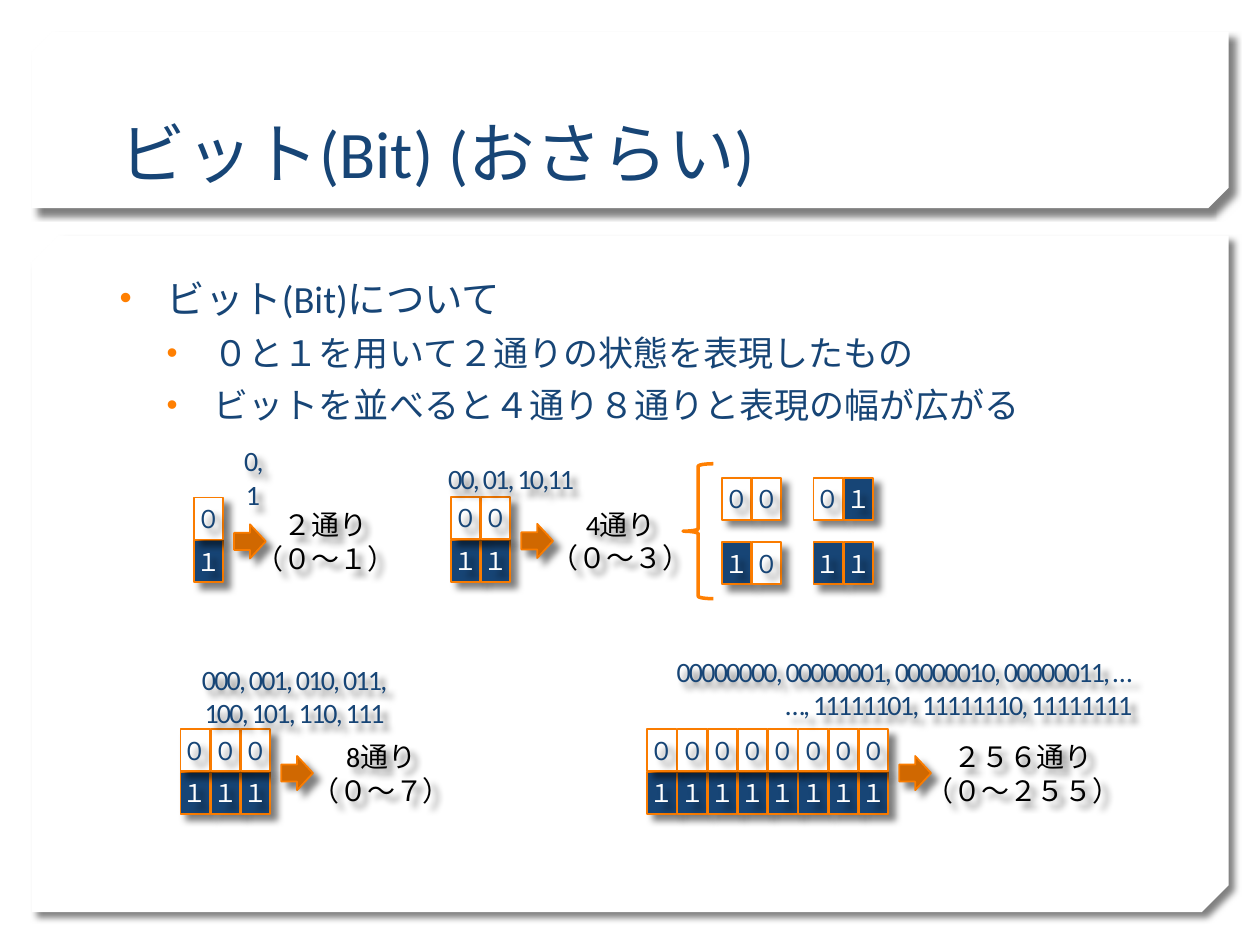
import pptx
import pptx.util
import pptx.dml.color
import pptx.enum.shapes
import pptx.enum.text
import pptx.oxml
import pptx.oxml.ns
import lxml.etree

Cm, Pt = pptx.util.Cm, pptx.util.Pt
SHAPE = pptx.enum.shapes.MSO_SHAPE
ALIGN = pptx.enum.text.PP_ALIGN
ANCHOR = pptx.enum.text.MSO_ANCHOR
qn = pptx.oxml.ns.qn

COLORS = {"white": "FFFFFF", "navy": "174576", "orange": "FF7F01", "edge": "FA7C00",
          "arrow": "D06801", "black": "000000"}
DIGITS = {"0": ("０", "white", "navy"), "1": ("１", "navy", "white")}
CELL_W, CELL_H, COL, ROW = 0.59, 0.85, 0.61, 0.86
FORMATS = {
    "title": {"size": Pt(38), "color": "navy"},
    "topic": {"size": Pt(22), "color": "navy"},
    "detail": {"size": Pt(20), "color": "navy"},
    "digit": {"size": Pt(14), "color": "navy"},
    "codes": {"size": Pt(16), "color": "navy"},
    "count": {"size": Pt(16), "color": "black"},
}


def rgb(name):
    """Return the named colour."""
    return pptx.dml.color.RGBColor.from_string(COLORS[name])


def add_shadow(sp):
    """Give a shape a soft shadow towards the lower right."""
    sp.shadow.inherit = False
    effects = sp._element.spPr.find(qn("a:effectLst"))
    shadow = lxml.etree.SubElement(effects, qn("a:outerShdw"), blurRad=str(Pt(4)),
                                   dist=str(Pt(5)), dir="2700000", algn="tl", rotWithShape="0")
    color = lxml.etree.SubElement(shadow, qn("a:srgbClr"), val=COLORS["black"])
    lxml.etree.SubElement(color, qn("a:alpha"), val="50000")


def add_box(s, kind, box, fill=None, line=None, width=1, shadow=True):
    """Add a preset shape with the given fill and line."""
    sp = s.shapes.add_shape(kind, *map(Cm, box))
    sp.shadow.inherit = False
    if fill:
        sp.fill.solid()
        sp.fill.fore_color.rgb = rgb(fill)
    else:
        sp.fill.background()
    if line:
        sp.line.color.rgb = rgb(line)
        sp.line.width = Pt(width)
    else:
        sp.line.fill.background()
    if shadow:
        add_shadow(sp)
    return sp


def fill_paragraph(p, text, style, color=None, spacing=None):
    """Write one run into a paragraph in a named format."""
    r = p.add_run()
    r.text = text
    r.font.name = "Calibri"
    for key, value in FORMATS[style].items():
        if key == "color":
            r.font.color.rgb = rgb(color or value)
        else:
            setattr(r.font, key, value)
    if spacing:
        r._r.get_or_add_rPr().set("spc", str(spacing * 100))


def add_text(s, box, lines, style, align=ALIGN.CENTER, anchor=ANCHOR.MIDDLE,
             color=None, spacing=None, shadow=True):
    """Add a wrapped text box with one paragraph per line."""
    sp = s.shapes.add_textbox(*map(Cm, box))
    tf = sp.text_frame
    for key, value in {"word_wrap": True, "vertical_anchor": anchor}.items():
        setattr(tf, key, value)
    for i, line in enumerate(lines):
        p = tf.add_paragraph() if i else tf.paragraphs[0]
        p.alignment = align
        fill_paragraph(p, line, style, color, spacing)
    if shadow:
        add_shadow(sp)
    return sp


def add_panel(s, box, snip):
    """Add a white panel with a snipped lower right corner."""
    sp = add_box(s, SHAPE.SNIP_2_DIAG_RECTANGLE, box, "white")
    sp.adjustments[0], sp.adjustments[1] = 0, snip
    sp._element.spPr.get_or_add_xfrm().set("flipV", "1")


def add_header(s, box, title):
    """Add the title panel and its title."""
    left, top, width, height = box
    add_panel(s, box, 0.117)
    add_text(s, (left + 1.52, top + 0.18, width - 3.07, height - 0.38), [title], "title",
             ALIGN.LEFT, ANCHOR.BOTTOM, shadow=False)


def add_body(s, box, items):
    """Add the body panel and its bulleted list of (level, text) items."""
    left, top, width, height = box
    add_panel(s, box, 0.04)
    sp = s.shapes.add_textbox(Cm(left + 1.52), Cm(top + 0.66), Cm(width - 3.07), Cm(11.13))
    tf = sp.text_frame
    tf.word_wrap = True
    for i, (level, text) in enumerate(items):
        p = tf.add_paragraph() if i else tf.paragraphs[0]
        p.level = level
        p.space_before = Pt(6 if level else 20)
        fill_paragraph(p, text, "detail" if level else "topic")
        pPr = p._p.get_or_add_pPr()
        pPr.set("marL", str(Cm(0.95 * (level + 1))))
        pPr.set("indent", str(-Cm(0.95)))
        color = lxml.etree.SubElement(pPr, qn("a:buClr"))
        lxml.etree.SubElement(color, qn("a:srgbClr"), val=COLORS["orange"])
        lxml.etree.SubElement(pPr, qn("a:buSzPct"), val="90000")
        lxml.etree.SubElement(pPr, qn("a:buFont"), typeface="Arial")
        lxml.etree.SubElement(pPr, qn("a:buChar"), char="•")


def add_bits(s, left, top, bits):
    """Add a row of bit cells."""
    for i, bit in enumerate(bits):
        digit, fill, color = DIGITS[bit]
        x = left + i * COL
        add_box(s, SHAPE.RECTANGLE, (x, top, CELL_W, CELL_H), fill, "edge")
        add_text(s, (x - 0.2, top, 0.92, CELL_H), [digit], "digit", color=color, spacing=-1)


def add_example(s, left, top, n, count, count_dx, count_w, codes, codes_box, align=ALIGN.CENTER):
    """Add n bits in both states, an arrow, the number of states and the codes."""
    add_bits(s, left, top + ROW, "1" * n)
    add_bits(s, left, top, "0" * n)
    arrow_x = left + (n - 1) * COL + 0.81
    add_box(s, SHAPE.RIGHT_ARROW, (arrow_x, top + 0.54, 0.64, 0.69), "arrow", "edge")
    add_text(s, (left + count_dx, top + 0.16, count_w, 1.45), count, "count")
    dx, dy, width, height = codes_box
    add_text(s, (left + dx, top + dy, width, height), codes, "codes", align, spacing=-1)


def add_combinations(s, left, top):
    """Add a brace and the four two-bit combinations in a grid."""
    add_box(s, SHAPE.LEFT_BRACE, (left, top, 0.61, 2.72), None, "orange", 2, shadow=False)
    for i, bits in enumerate(("00", "01", "10", "11")):
        row, col = divmod(i, 2)
        add_bits(s, left + 0.78 + col * 1.85, top + 0.28 + row * 1.3, bits)


def main():
    """Build and save the slide."""
    prs = pptx.Presentation()
    prs.slide_width, prs.slide_height = Cm(25.4), Cm(19.05)
    s = prs.slides.add_slide(prs.slide_layouts[6])
    add_body(s, (0.64, 4.75, 24.13, 13.64), [
        (0, "ビット(Bit)について"),
        (1, "０と１を用いて２通りの状態を表現したもの"),
        (1, "ビットを並べると４通り８通りと表現の幅が広がる")])
    add_header(s, (0.64, 0.64, 24.13, 3.56), "ビット(Bit) (おさらい)")
    add_example(s, 3.91, 10.03, 1, ["２通り", "（０〜１）"], 0.94, 3.43,
                ["0, 1"], (0.58, -0.69, 1.22, 0.56))
    add_example(s, 9.09, 10.02, 2, ["4通り", "（０〜３）"], 1.71, 3.43,
                ["00, 01, 10,11"], (-0.51, -0.64, 3.45, 0.53))
    add_example(s, 3.64, 14.7, 3, ["8通り", "（０〜７）"], 2.33, 3.43,
                ["000, 001, 010, 011,", "100, 101, 110, 111"], (0.13, -1.14, 4.34, 0.94))
    add_example(s, 13.05, 14.7, 8, ["２５６通り", "（０〜２５５）"], 5.11, 4.93,
                ["00000000, 00000001, 00000010, 00000011, …",
                 "…, 11111101, 11111110, 11111111"], (0, -1.3, 10.03, 0.94), ALIGN.RIGHT)
    add_combinations(s, 13.77, 9.35)
    prs.save("out.pptx")


if __name__ == "__main__":
    main()
